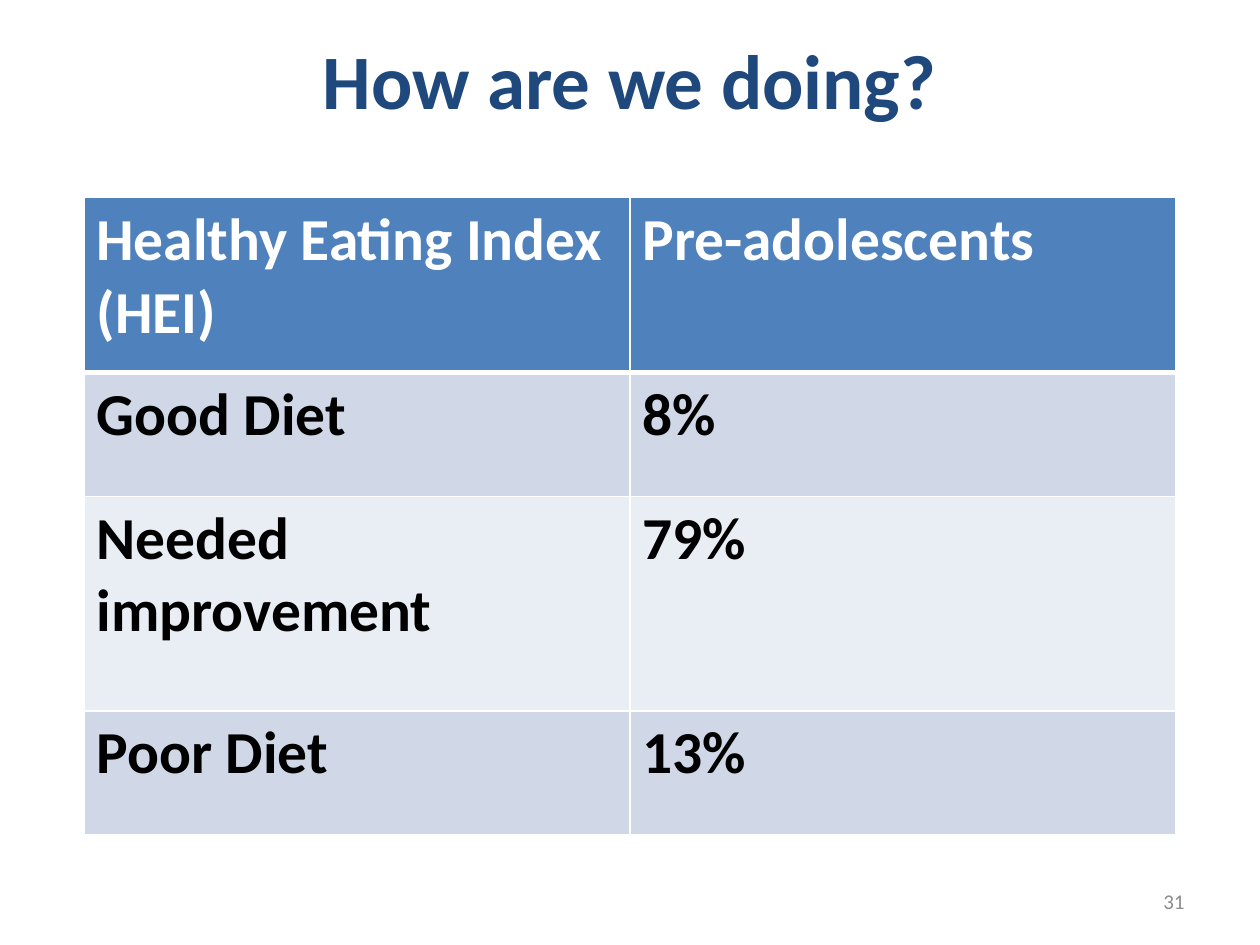
import lxml.etree
import pptx
import pptx.dml.color
import pptx.enum.text
import pptx.oxml.ns
import pptx.util

Pt = pptx.util.Pt
ALIGN = pptx.enum.text.PP_ALIGN
COLORS = {
    "title": "1F497D",
    "header": "4F81BD",
    "band": "D0D8E8",
    "light": "E9EDF4",
    "white": "FFFFFF",
    "body": "000000",
    "number": "8C8C8C",
}


class SlideBuilder:
    """Holds the style and the current slide and adds elements to it."""

    font = "Calibri"

    def __init__(self, deck):
        self.page = deck.slides.add_slide(deck.slide_layouts[6])

    def color(self, name):
        return pptx.dml.color.RGBColor.from_string(COLORS[name])

    def add_span(self, frame, text, size, color, bold=False, align=ALIGN.LEFT):
        para = frame.paragraphs[0]
        para.alignment = align
        span = para.add_run()
        span.text = text
        span.font.name = self.font
        span.font.size = Pt(size)
        span.font.bold = bold
        span.font.color.rgb = self.color(color)

    def add_text(self, text, left, top, width, height, size, color, bold, align):
        box = self.page.shapes.add_textbox(Pt(left), Pt(top), Pt(width), Pt(height))
        frame = box.text_frame
        frame.word_wrap = True
        frame.vertical_anchor = pptx.enum.text.MSO_ANCHOR.MIDDLE
        self.add_span(frame, text, size, color, bold, align)

    def add_borders(self, cell, widths):
        properties = cell._tc.get_or_add_tcPr()
        qn = pptx.oxml.ns.qn
        for side, width in widths.items():
            line = lxml.etree.SubElement(properties, qn(f"a:ln{side}"), w=str(Pt(width)))
            fill = lxml.etree.SubElement(line, qn("a:solidFill"))
            lxml.etree.SubElement(fill, qn("a:srgbClr"), val=COLORS["white"])

    def add_table(self, rows, left, top, column_width, heights, size):
        columns = len(rows[0])
        table = self.page.shapes.add_table(
            len(rows), columns, Pt(left), Pt(top),
            Pt(column_width * columns), Pt(sum(heights)),
        ).table
        for column in table.columns:
            column.width = Pt(column_width)
        for r, (values, height) in enumerate(zip(rows, heights)):
            table.rows[r].height = Pt(height)
            fill = "header" if r == 0 else "band" if r % 2 else "light"
            widths = {"L": 1, "R": 1, "T": 3 if r == 1 else 1, "B": 3 if r == 0 else 1}
            for c, value in enumerate(values):
                cell = table.cell(r, c)
                self.add_borders(cell, widths)
                cell.fill.solid()
                cell.fill.fore_color.rgb = self.color(fill)
                self.add_span(cell.text_frame, value, size, "body" if r else "white", True)


def main():
    deck = pptx.Presentation()
    deck.slide_width, deck.slide_height = Pt(720), Pt(540)
    slide = SlideBuilder(deck)
    slide.add_text("How are we doing?", 36, 0, 648, 90, 44, "title", True, ALIGN.CENTER)
    rows = [
        ("Healthy Eating Index (HEI)", "Pre-adolescents"),
        ("Good Diet", "8%"),
        ("Needed improvement", "79%"),
        ("Poor Diet", "13%"),
    ]
    slide.add_table(rows, 48, 113, 312, [100, 70.8, 122.4, 70.8], 34)
    slide.add_text("31", 516, 500.5, 168, 28.75, 12, "number", False, ALIGN.RIGHT)
    deck.save("out.pptx")


if __name__ == "__main__":
    main()
